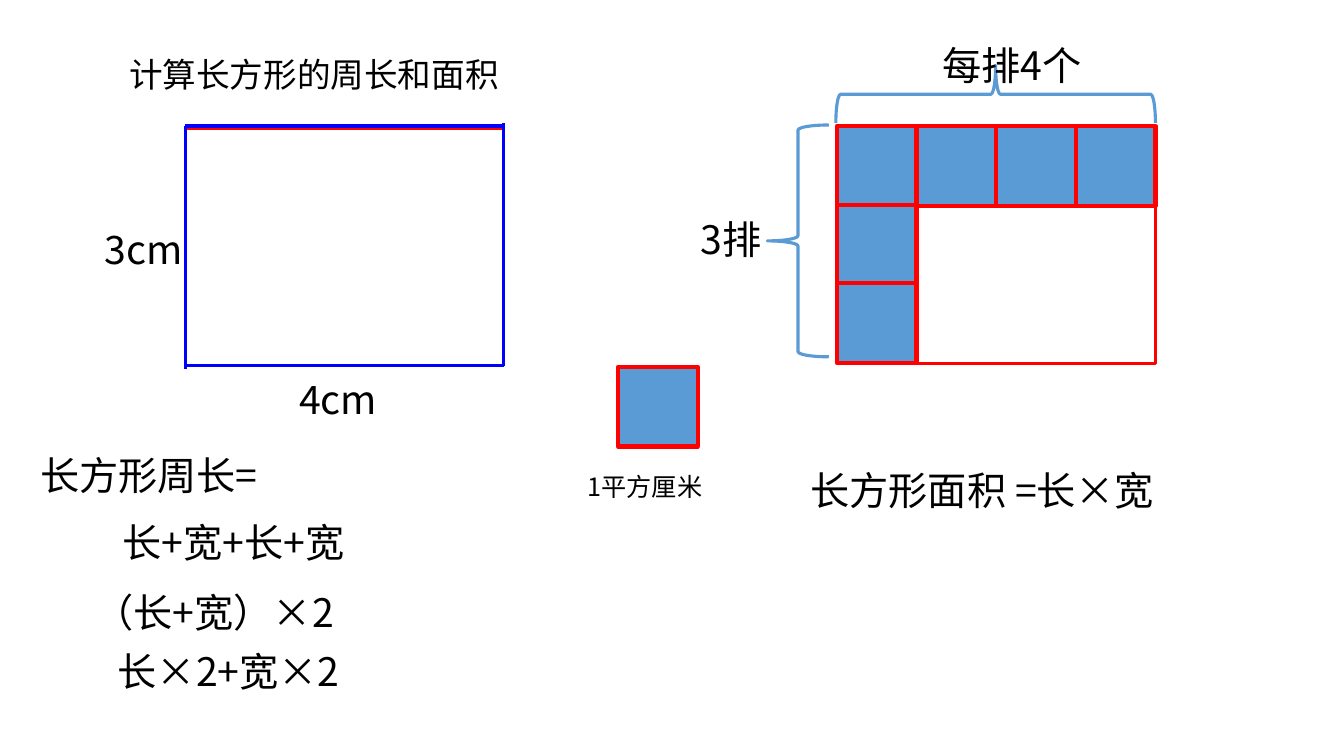
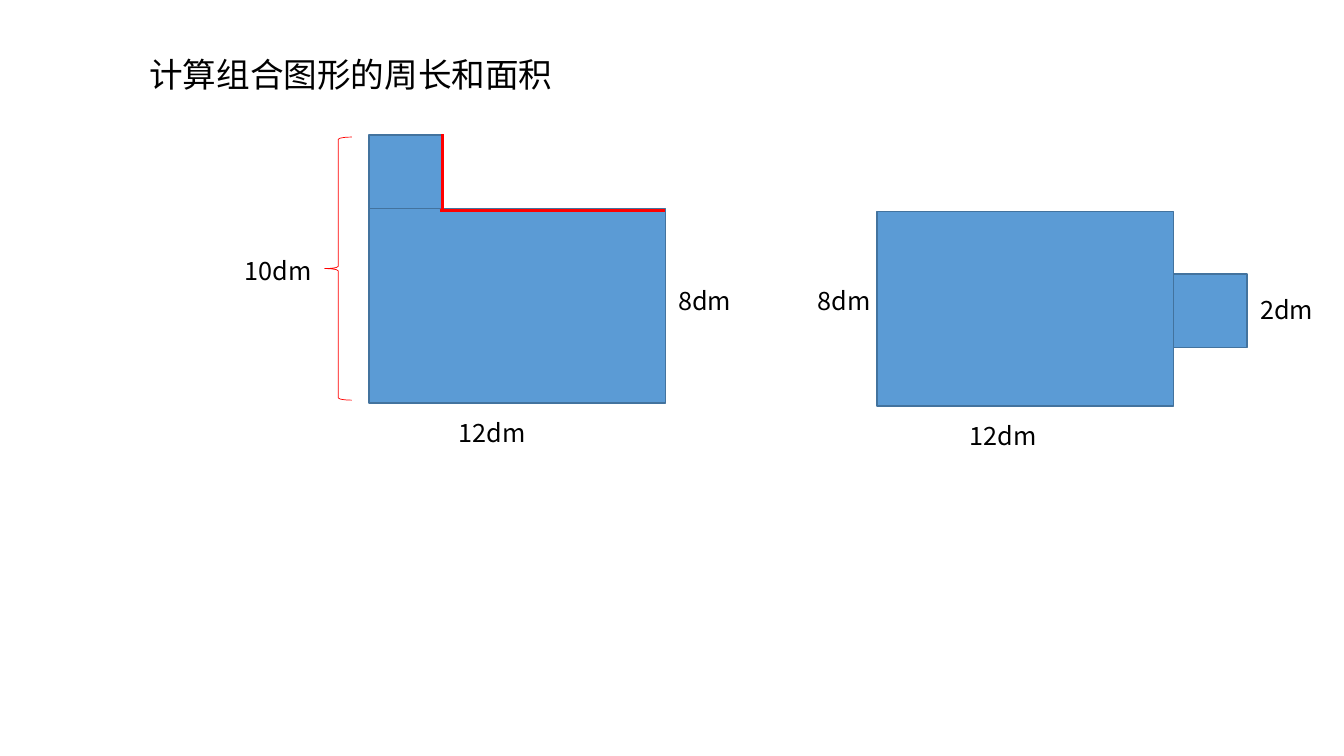
import dataclasses

import lxml.etree
import pptx
import pptx.dml.color
import pptx.enum.shapes
import pptx.enum.text
import pptx.oxml.ns
import pptx.util

Inches = pptx.util.Inches
SHAPE = pptx.enum.shapes.MSO_SHAPE


@dataclasses.dataclass(frozen=True)
class Theme:
    """Colours, font, type sizes and line widths of the deck."""
    font: str = "Noto Sans CJK SC"
    ink: str = "000000"
    fill: str = "5B9BD5"
    edge: str = "43739E"
    red: str = "FF0000"
    blue: str = "0000FF"
    title: int = 24
    formula: int = 28
    label: int = 18
    hair: float = 0.5
    thin: float = 1
    medium: float = 2.25
    thick: float = 3


@dataclasses.dataclass(frozen=True)
class Box:
    """A rectangle in inches."""
    left: float
    top: float
    width: float
    height: float

    def inner(self, left, top, width, height):
        """Return a box placed relative to this one."""
        return Box(self.left + left, self.top + top, width, height)

    def lengths(self):
        """Return left, top, width and height as lengths."""
        return [Inches(value) for value in dataclasses.astuple(self)]


THEME = Theme()


def colour(code):
    """Turn a hexadecimal code into a colour."""
    return pptx.dml.color.RGBColor.from_string(code)


def apply(target, values):
    """Set every attribute named in a dict of format values."""
    for name, value in values.items():
        setattr(target, name, value)


def write(frame, text, size):
    """Write one left-aligned line in the deck's font."""
    apply(frame, {"word_wrap": True,
                  "vertical_anchor": pptx.enum.text.MSO_ANCHOR.TOP,
                  "auto_size": pptx.enum.text.MSO_AUTO_SIZE.SHAPE_TO_FIT_TEXT})
    para = frame.paragraphs[0]
    para.alignment = pptx.enum.text.PP_ALIGN.LEFT
    span = para.add_run()
    span.text = text
    apply(span.font, {"size": pptx.util.Pt(size), "name": THEME.font})
    span.font.color.rgb = colour(THEME.ink)
    lxml.etree.SubElement(span.font._element, pptx.oxml.ns.qn("a:ea"),
                          typeface=THEME.font)


def add_label(page, box, text, size=THEME.label):
    """Add a text box."""
    write(page.shapes.add_textbox(*box.lengths()).text_frame, text, size)


def set_line(item, code, width):
    """Give a shape or connector its line."""
    item.line.color.rgb = colour(code)
    item.line.width = pptx.util.Pt(width)


def add_figure(page, box, line, width, fill=None, kind=SHAPE.RECTANGLE, turn=0):
    """Add a flat preset shape, hollow unless a fill is given."""
    figure = page.shapes.add_shape(kind, *box.lengths())
    apply(figure, {"rotation": turn})
    figure.shadow.inherit = False
    if fill:
        figure.fill.solid()
        figure.fill.fore_color.rgb = colour(fill)
    else:
        figure.fill.background()
    set_line(figure, line, width)


def add_stroke(page, box, line):
    """Draw a straight line from a box's top left to its bottom right."""
    left, top, width, height = box.lengths()
    stroke = page.shapes.add_connector(
        pptx.enum.shapes.MSO_CONNECTOR.STRAIGHT, left, top, left + width, top + height)
    set_line(stroke, line, THEME.medium)
    lxml.etree.SubElement(stroke._element.spPr, pptx.oxml.ns.qn("a:effectLst"))


def add_page(deck, title, box):
    """Add a title-only slide and place its title."""
    page = deck.slides.add_slide(deck.slide_layouts[5])
    holder = page.shapes.title
    apply(holder, dict(zip(("left", "top", "width", "height"), box.lengths())))
    write(holder.text_frame, title, THEME.title)
    return page


def perimeter_region(page, box):
    """Show the outlined rectangle with its measured sides."""
    add_figure(page, box.inner(0, 0.02, 3.15, 2.36), THEME.red, THEME.medium)
    for side in ((0, 2.38, 3.16, 0), (0, 0, 3.16, 0),
                 (3.15, -0.03, 0, 2.41), (0, 0, 0, 2.41)):
        add_stroke(page, box.inner(*side), THEME.blue)
    add_label(page, box.inner(1.03, 2.42, 1.24, 0.57), "4cm", THEME.formula)
    add_label(page, box.inner(-0.9, 0.94, 1.24, 0.57), "3cm", THEME.formula)


def formula_region(page, box):
    """List the ways to work out the perimeter."""
    for left, top, text in ((0, 0, "长方形周长="), (0.82, 0.66, "长+宽+长+宽"),
                            (0.54, 1.36, "（长+宽）×2"), (0.77, 1.94, "长×2+宽×2")):
        add_label(page, box.inner(left, top, box.width, 0.57), text, THEME.formula)


def add_tile(page, box):
    """Add one unit square."""
    add_figure(page, box, THEME.red, THEME.thick, THEME.fill)


def unit_region(page, box):
    """Show the unit square with its caption."""
    add_tile(page, box.inner(0, 0, 0.79, 0.79))
    add_label(page, box.inner(-0.4, 0.99, 2.16, 0.4), "1平方厘米")


def area_region(page, box):
    """Fill the first row and column of a rectangle with unit squares."""
    columns, rows, size, row_step = 4, 3, 0.79, 0.78
    cells = [(column, 0) for column in reversed(range(columns))]
    cells += [(0, row) for row in range(1, rows)]
    for column, row in cells:
        add_tile(page, box.inner(column * size, row * row_step, size, size))
    add_figure(page, box.inner(0.01, 0, 3.15, 2.36), THEME.red, THEME.medium)
    add_figure(page, box.inner(-0.69, -0.01, 0.61, 2.3), THEME.fill, THEME.medium,
               kind=SHAPE.LEFT_BRACE)
    add_label(page, box.inner(-1.45, 0.84, 1.1, 0.57), "3排", THEME.formula)
    add_figure(page, box.inner(1.29, -1.9, 0.57, 3.17), THEME.fill, THEME.medium,
               kind=SHAPE.RIGHT_BRACE, turn=270)
    add_label(page, box.inner(0.95, -0.89, 2.21, 0.57), "每排4个", THEME.formula)
    add_label(page, box.inner(-0.36, 3.33, 4.76, 1.04), "长方形面积 =长×宽", THEME.formula)


def add_compound(page, box, square):
    """Draw a large rectangle with a small square attached to it."""
    for block in (box, box.inner(*square, 0.73, 0.73)):
        add_figure(page, block, THEME.edge, THEME.thin, THEME.fill)


def stacked_region(page, box):
    """Show the rectangle with a square on its top left corner."""
    add_compound(page, box, (0, -0.73))
    for left, top, text in ((0.79, 2.02, "12dm"), (-1.33, 0.41, "10dm"),
                            (2.97, 0.71, "8dm")):
        add_label(page, box.inner(left, top, 1.3, 0.4), text)
    add_figure(page, box.inner(-0.44, -0.71, 0.27, 2.61), THEME.red, THEME.hair,
               kind=SHAPE.LEFT_BRACE)
    for edge in ((0.7, 0.02, 2.24, 0), (0.73, -0.74, 0, 0.77)):
        add_stroke(page, box.inner(*edge), THEME.red)


def side_region(page, box):
    """Show the rectangle with a square on its right side."""
    add_compound(page, box, (box.width, 0.62))
    for left, top, text in ((0.82, 2.02, "12dm"), (-0.69, 0.68, "8dm"),
                            (3.7, 0.77, "2dm")):
        add_label(page, box.inner(left, top, 0.9, 0.4), text)


def rectangle_page(deck):
    """Build the slide on perimeter and area of a rectangle."""
    page = add_page(deck, "计算长方形的周长和面积", Box(1.18, 0.48, 3.99, 0.5))
    perimeter_region(page, Box(1.84, 1.25, 3.15, 2.38))
    formula_region(page, Box(0.3, 4.43, 4.03, 2.51))
    unit_region(page, Box(6.13, 3.64, 0.79, 1.39))
    area_region(page, Box(8.3, 1.25, 3.16, 2.36))


def compound_page(deck):
    """Build the slide on perimeter and area of compound figures."""
    page = add_page(deck, "计算组合图形的周长和面积", Box(1.38, 0.48, 5.15, 0.5))
    stacked_region(page, Box(3.66, 2.07, 2.94, 1.93))
    side_region(page, Box(8.7, 2.1, 2.94, 1.93))


def main():
    """Build and save the deck."""
    deck = pptx.Presentation()
    apply(deck, {"slide_width": Inches(13.33), "slide_height": Inches(7.5)})
    rectangle_page(deck)
    compound_page(deck)
    deck.save("out.pptx")


if __name__ == "__main__":
    main()
